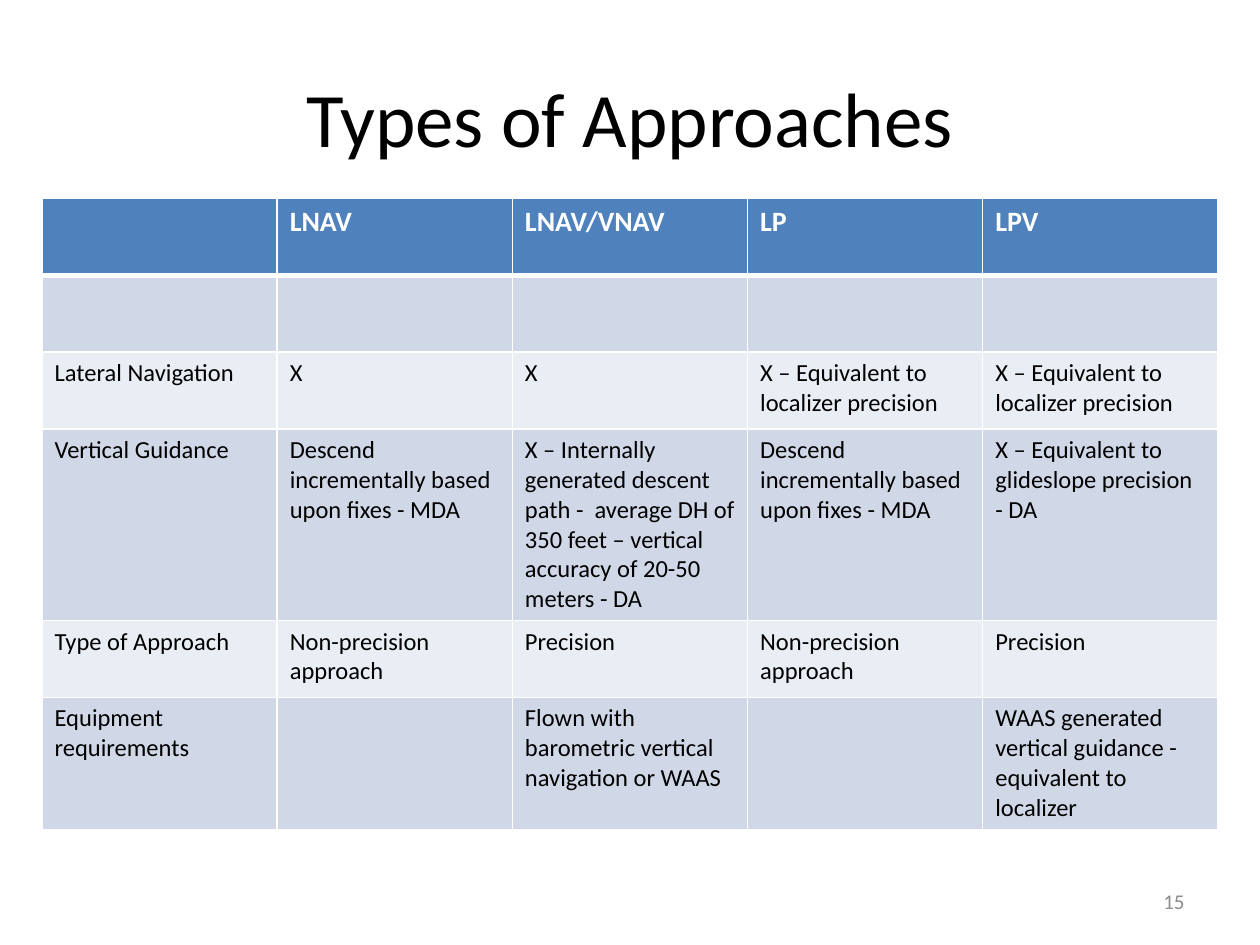
import pptx
import pptx.util
import pptx.dml.color
import pptx.enum.text
import pptx.oxml
import pptx.oxml.ns

BLACK = pptx.dml.color.RGBColor(0x00, 0x00, 0x00)
WHITE = pptx.dml.color.RGBColor(0xFF, 0xFF, 0xFF)
GRAY = pptx.dml.color.RGBColor(0x8C, 0x8C, 0x8C)
HEADER_BLUE = pptx.dml.color.RGBColor(0x4F, 0x81, 0xBD)
DARK_BAND = pptx.dml.color.RGBColor(0xD0, 0xD8, 0xE8)
LIGHT_BAND = pptx.dml.color.RGBColor(0xE9, 0xED, 0xF4)

ALIGN = pptx.enum.text.PP_ALIGN
MIDDLE = pptx.enum.text.MSO_ANCHOR.MIDDLE
WIDTH = pptx.util.Inches(10)
HEIGHT = pptx.util.Inches(7.5)


def write_text(frame, text, size, color=BLACK, bold=False, align=ALIGN.LEFT):
    para = frame.paragraphs[0]
    para.alignment = align
    span = para.add_run()
    span.text = text
    span.font.name = "Calibri"
    span.font.size = pptx.util.Pt(size)
    span.font.bold = bold
    span.font.color.rgb = color


def add_border(cell, side, points):
    line = pptx.oxml.parse_xml(
        f'<a:{side} {pptx.oxml.ns.nsdecls("a")} w="{pptx.util.Pt(points)}">'
        f'<a:solidFill><a:srgbClr val="{WHITE}"/></a:solidFill></a:{side}>'
    )
    cell._tc.get_or_add_tcPr().append(line)


deck = pptx.Presentation()
deck.slide_width = WIDTH
deck.slide_height = HEIGHT
page = deck.slides.add_slide(deck.slide_layouts[5])

title = page.shapes.title
title.left, title.top = int(WIDTH * 0.05), int(HEIGHT * 0.04)
title.width, title.height = int(WIDTH * 0.9), int(HEIGHT / 6)
title.text_frame.vertical_anchor = MIDDLE
write_text(title.text_frame, "Types of Approaches", 44, align=ALIGN.CENTER)

LOCALIZER = "X – Equivalent to localizer precision"
STEP_DOWN = "Descend incrementally based upon fixes - MDA"
NON_PRECISION = "Non-precision approach"
approaches = [
    ["", "LNAV", "LNAV/VNAV", "LP", "LPV"],
    [""] * 5,
    ["Lateral Navigation", "X", "X", LOCALIZER, LOCALIZER],
    [
        "Vertical Guidance",
        STEP_DOWN,
        "X – Internally generated descent path -  average DH of 350 feet"
        " – vertical accuracy of 20-50 meters - DA",
        STEP_DOWN,
        "X – Equivalent to glideslope precision - DA",
    ],
    ["Type of Approach", NON_PRECISION, "Precision", NON_PRECISION, "Precision"],
    [
        "Equipment requirements",
        "",
        "Flown with barometric vertical navigation or WAAS",
        "",
        "WAAS generated vertical guidance - equivalent to localizer",
    ],
]

margin = int(WIDTH / 30)
row_height = pptx.util.Inches(0.61)
table = page.shapes.add_table(
    len(approaches), len(approaches[0]),
    margin, int(HEIGHT * 0.21), WIDTH - 2 * margin, row_height * len(approaches),
).table

for row_index, row in enumerate(approaches):
    is_header = row_index == 0
    band = DARK_BAND if row_index % 2 else LIGHT_BAND
    table.rows[row_index].height = row_height
    for column_index, text in enumerate(row):
        cell = table.cell(row_index, column_index)
        add_border(cell, "lnL", 1)
        add_border(cell, "lnR", 1)
        add_border(cell, "lnT", 3 if row_index == 1 else 1)
        add_border(cell, "lnB", 3 if is_header else 1)
        cell.fill.solid()
        cell.fill.fore_color.rgb = HEADER_BLUE if is_header else band
        if text:
            write_text(
                cell.text_frame, text,
                size=16 if is_header else 14,
                color=WHITE if is_header else BLACK,
                bold=is_header,
            )

number_width = int(WIDTH * 0.7 / 3)
number_box = page.shapes.add_textbox(
    int(WIDTH * 0.95) - number_width, int(HEIGHT * 0.927), number_width, int(HEIGHT * 0.053)
)
number_box.text_frame.word_wrap = True
number_box.text_frame.vertical_anchor = MIDDLE
write_text(number_box.text_frame, "15", 12, color=GRAY, align=ALIGN.RIGHT)

deck.save("out.pptx")
